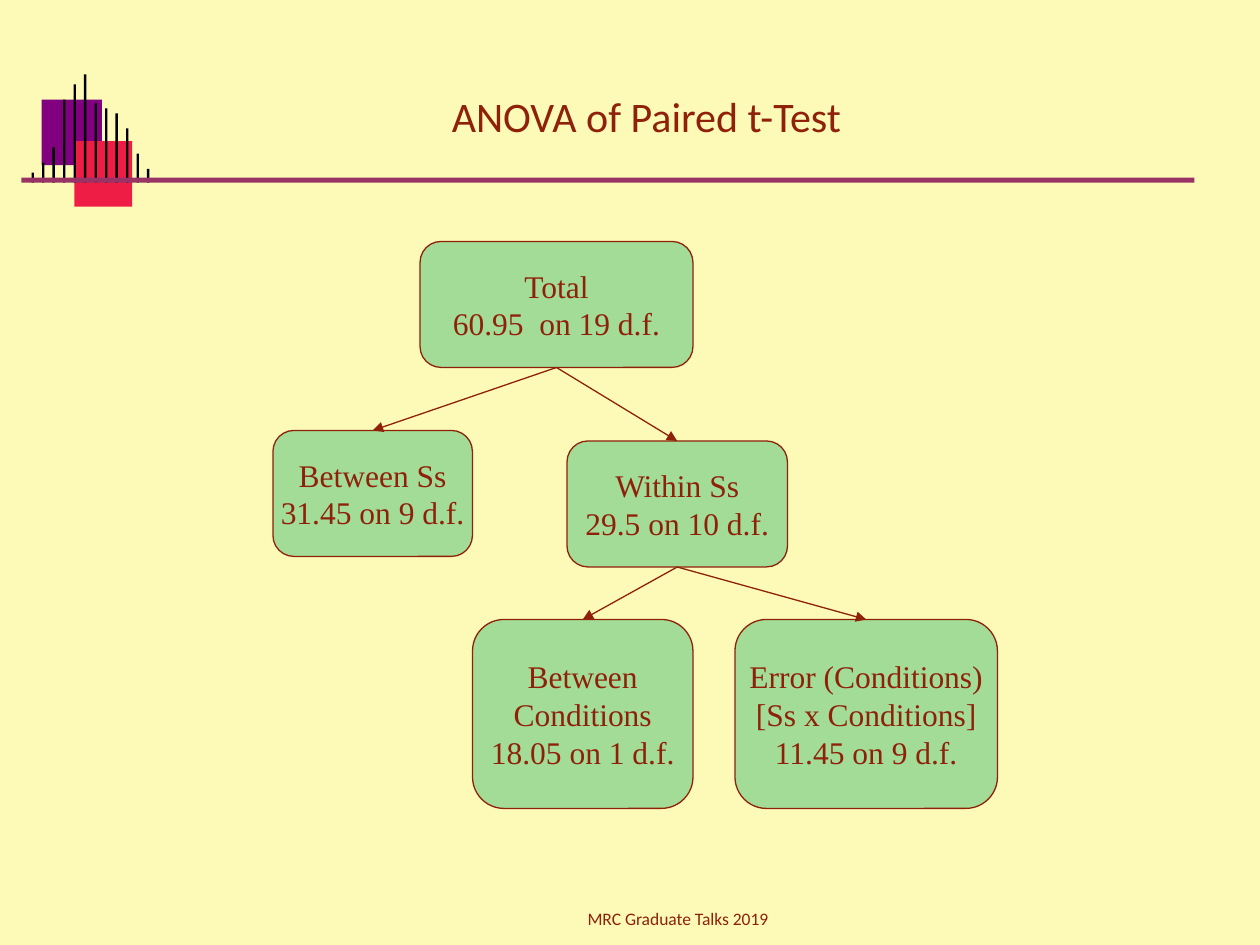
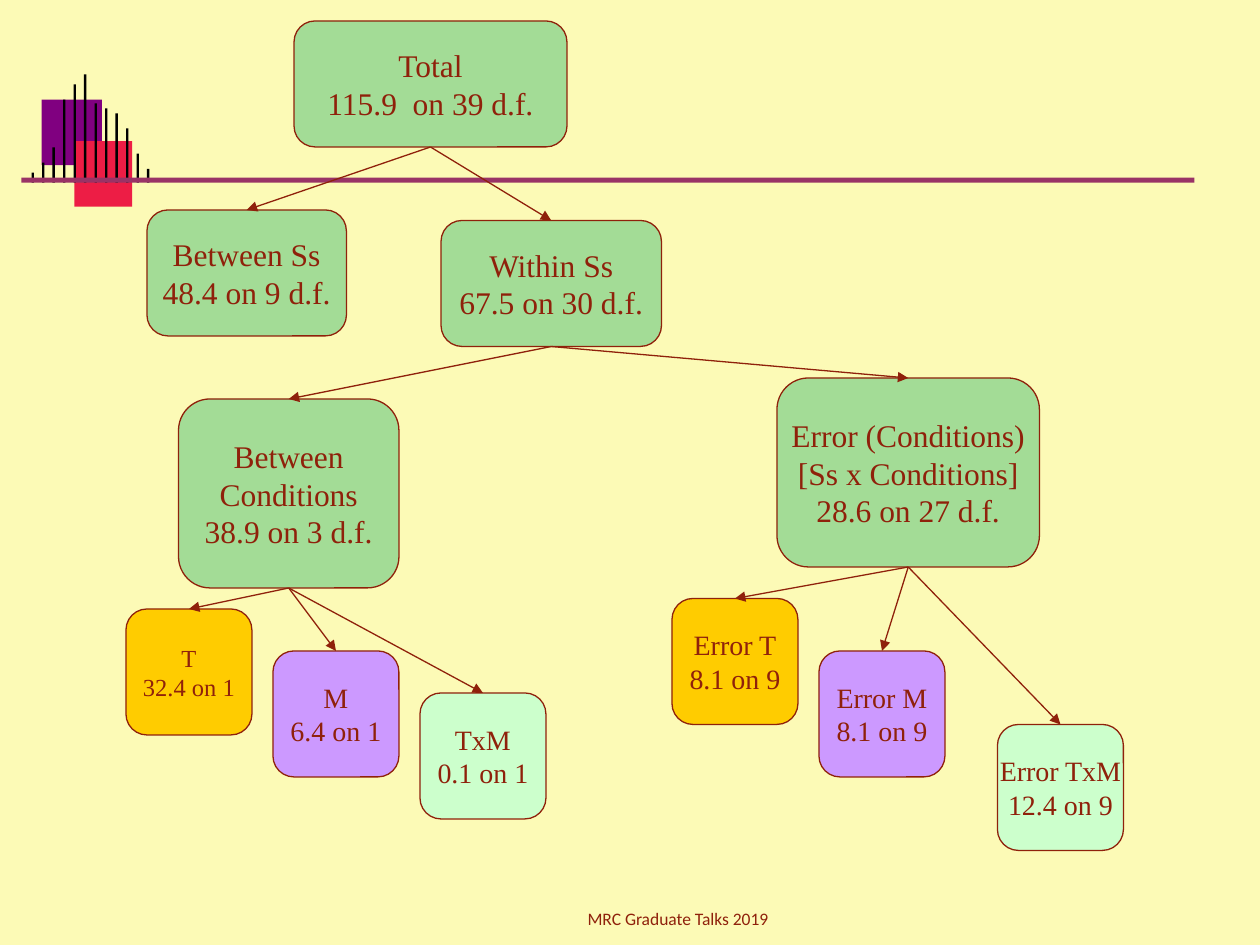
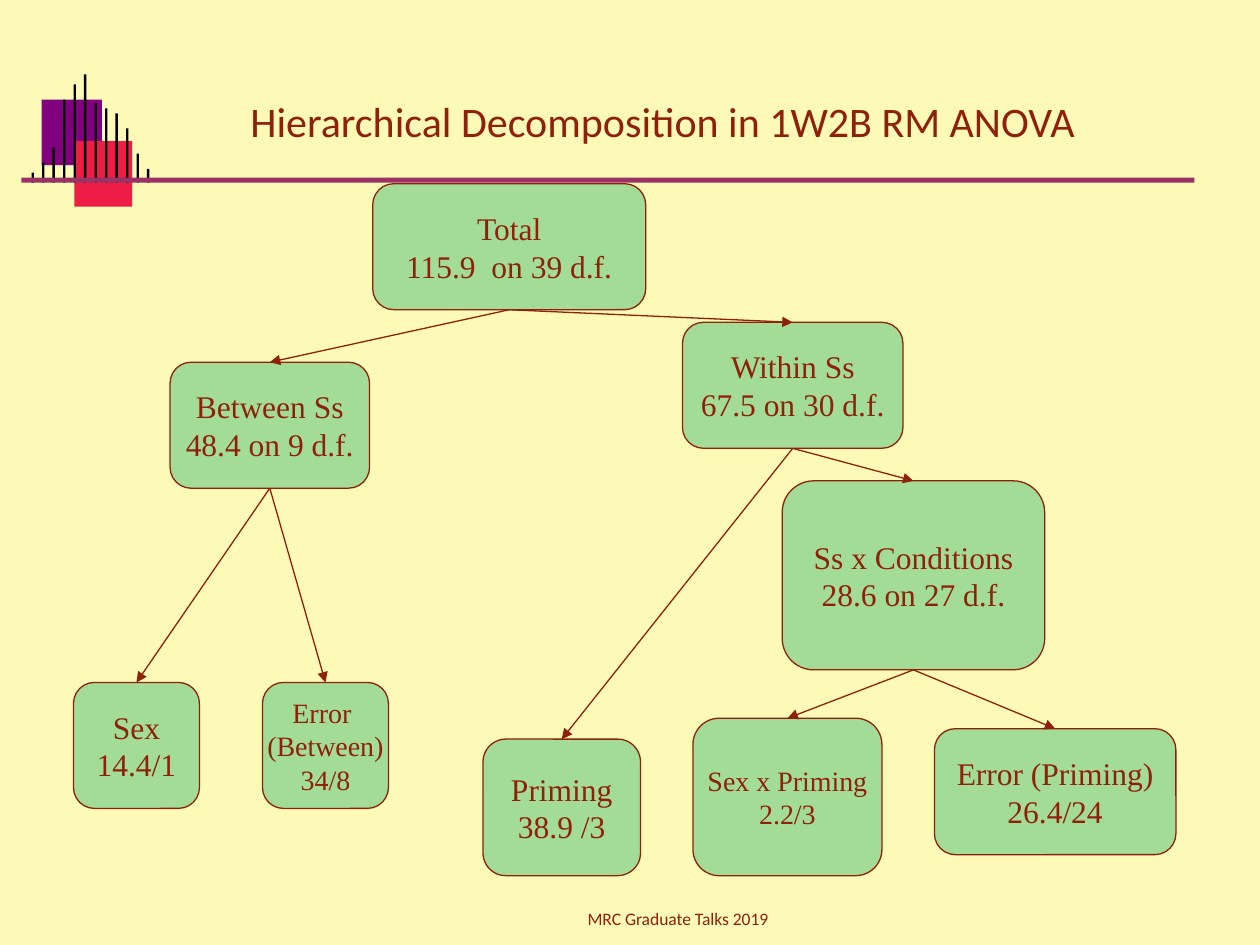
from lxml import etree
from pptx import Presentation
from pptx.dml.color import RGBColor
from pptx.enum.shapes import MSO_CONNECTOR as CONNECTOR, MSO_SHAPE as SHAPE
from pptx.enum.text import MSO_ANCHOR as ANCHOR, MSO_AUTO_SIZE as AUTO_SIZE, PP_ALIGN as ALIGN
from pptx.oxml.ns import qn
from pptx.util import Inches, Pt

# Shared look
COLORS = {
    "background": "FCFAB6", "ink": "8F210B", "band": "993366",
    "purple": "800080", "red": "ED1D45", "black": "000000",
    "green": "A3DC96", "gold": "FFCC00", "lilac": "CC99FF", "mint": "CCFFCC",
}
COLORS = {name: RGBColor.from_string(value) for name, value in COLORS.items()}
TITLE_FORMAT = {"name": "Calibri", "size": Pt(24)}
FOOTER_FORMAT = {"name": "Calibri", "size": Pt(10)}
NODE_FONT = "Times New Roman"
GRID = 1 / 12  # inches: the slide is 120 columns by 90 rows
BAR_TOPS = [1.37, 1.29, 1.17, 0.79, 0.67, 0.59, 0.82, 0.86, 0.9, 1.02, 1.22, 1.34]
BAR_BOTTOM = 1.45

# Decoration behind every slide, in inches: colour, left, top, width, height
decoration = [("purple", 0.33, 0.79, 0.48, 0.52), ("red", 0.59, 1.12, 0.46, 0.52)]
for index, top in enumerate(BAR_TOPS):
    decoration.append(("black", 0.25 + index * GRID, top, 0.02, BAR_BOTTOM - top))
decoration.append(("band", 0.17, 1.41, 9.31, 0.04))

# Trees. Node: text, left, top, width, height in grid units, size, fill, parent
slides = [
    {
        "title": "ANOVA of Paired t-Test",
        "title_box": (1.42, 0.67, 7.42, 0.5),
        "nodes": {
            "total": ("Total\n60.95  on 19 d.f.", 40, 23, 26, 12, 18, "green", None),
            "between": ("Between Ss\n31.45 on 9 d.f.", 26, 41, 19, 12, 18, "green", "total"),
            "within": ("Within Ss\n29.5 on 10 d.f.", 54, 42, 21, 12, 18, "green", "total"),
            "conditions": ("Between\nConditions\n18.05 on 1 d.f.",
                           45, 59, 21, 18, 18, "green", "within"),
            "error": ("Error (Conditions)\n[Ss x Conditions]\n11.45 on 9 d.f.",
                      70, 59, 25, 18, 18, "green", "within"),
        },
    },
    {
        "title": None,
        "nodes": {
            "total": ("Total\n115.9  on 39 d.f.", 28, 2, 26, 12, 18, "green", None),
            "between": ("Between Ss\n48.4 on 9 d.f.", 14, 20, 19, 12, 18, "green", "total"),
            "within": ("Within Ss\n67.5 on 30 d.f.", 42, 21, 21, 12, 18, "green", "total"),
            "conditions": ("Between\nConditions\n38.9 on 3 d.f.",
                           17, 38, 21, 18, 18, "green", "within"),
            "error": ("Error (Conditions)\n[Ss x Conditions]\n28.6 on 27 d.f.",
                      74, 36, 25, 18, 18, "green", "within"),
            "t": ("T\n32.4 on 1", 12, 58, 12, 12, 14, "gold", "conditions"),
            "m": ("M\n6.4 on 1", 26, 62, 12, 12, 16, "lilac", "conditions"),
            "txm": ("TxM\n0.1 on 1", 40, 66, 12, 12, 16, "mint", "conditions"),
            "error t": ("Error T\n8.1 on 9", 64, 57, 12, 12, 16, "gold", "error"),
            "error m": ("Error M\n8.1 on 9", 78, 62, 12, 12, 16, "lilac", "error"),
            "error txm": ("Error TxM\n12.4 on 9", 95, 69, 12, 12, 16, "mint", "error"),
        },
    },
    {
        "title": "Hierarchical Decomposition in 1W2B RM ANOVA",
        "title_box": (0.98, 0.71, 8.56, 0.5),
        "nodes": {
            "total": ("Total\n115.9  on 39 d.f.", 35.5, 17.5, 26, 12, 18, "green", None),
            "between": ("Between Ss\n48.4 on 9 d.f.", 16.2, 34.5, 19, 12, 18, "green", "total"),
            "within": ("Within Ss\n67.5 on 30 d.f.", 65, 30.7, 21, 12, 18, "green", "total"),
            "priming": ("Priming\n38.9 /3", 46, 70.4, 15, 13, 18, "green", "within"),
            "conditions": ("Ss x Conditions\n28.6 on 27 d.f.",
                           74.5, 45.8, 25, 18, 18, "green", "within"),
            "sex priming": ("Sex x Priming\n2.2/3", 66, 68.4, 18, 15, 16, "green", "conditions"),
            "error priming": ("Error (Priming)\n26.4/24",
                              89, 69.4, 23, 12, 18, "green", "conditions"),
            "error between": ("Error \n(Between)\n34/8", 25, 65, 12, 12, 16, "green", "between"),
            "sex": ("Sex\n14.4/1", 7, 65, 12, 12, 18, "green", "between"),
        },
    },
]


def add_filled(slide, kind, box, color):
    shape = slide.shapes.add_shape(kind, *map(Inches, box))
    shape.shadow.inherit = False
    shape.fill.solid()
    shape.fill.fore_color.rgb = COLORS[color]
    shape.line.fill.background()
    return shape


def write_text(shape, text, font_format, anchor, wrap=True):
    frame = shape.text_frame
    frame.text = text
    frame.word_wrap = wrap
    frame.auto_size = AUTO_SIZE.NONE
    frame.vertical_anchor = anchor
    for paragraph in frame.paragraphs:
        paragraph.alignment = ALIGN.CENTER
        for run in paragraph.runs:
            run.font.color.rgb = COLORS["ink"]
            for name, value in font_format.items():
                setattr(run.font, name, value)


presentation = Presentation()
presentation.slide_width, presentation.slide_height = Inches(10), Inches(7.5)
background = presentation.slide_master.background.fill
background.solid()
background.fore_color.rgb = COLORS["background"]
title_only, blank = presentation.slide_layouts[5], presentation.slide_layouts[6]

for content in slides:
    slide = presentation.slides.add_slide(title_only if content["title"] else blank)

    # Emblem, band and footer
    for color, *box in decoration:
        add_filled(slide, SHAPE.RECTANGLE, box, color)
    footer = slide.shapes.add_textbox(*map(Inches, (2.92, 6.92, 4.92, 0.5)))
    write_text(footer, "MRC Graduate Talks 2019", FOOTER_FORMAT, ANCHOR.BOTTOM)

    # Title
    if content["title"]:
        title = slide.shapes.title
        title.left, title.top, title.width, title.height = map(Inches, content["title_box"])
        write_text(title, content["title"], TITLE_FORMAT, ANCHOR.TOP)

    # Nodes, each joined to its parent by an arrow
    nodes = {}
    for name, (text, *cells, size, fill, parent) in content["nodes"].items():
        node = add_filled(slide, SHAPE.ROUNDED_RECTANGLE, [cell * GRID for cell in cells], fill)
        node.line.color.rgb = COLORS["ink"]
        node.line.width = Pt(0.75)
        write_text(node, text, {"name": NODE_FONT, "size": Pt(size)}, ANCHOR.MIDDLE, wrap=False)
        nodes[name] = node
        if parent:
            arrow = slide.shapes.add_connector(CONNECTOR.STRAIGHT, 0, 0, 0, 0)
            arrow.begin_connect(nodes[parent], 2)
            arrow.end_connect(node, 0)
            arrow.line.color.rgb = COLORS["ink"]
            arrow.line.width = Pt(0.75)
            etree.SubElement(arrow.line._get_or_add_ln(), qn("a:tailEnd"), type="triangle")
            etree.SubElement(arrow._element.spPr, qn("a:effectLst"))

presentation.save("out.pptx")
